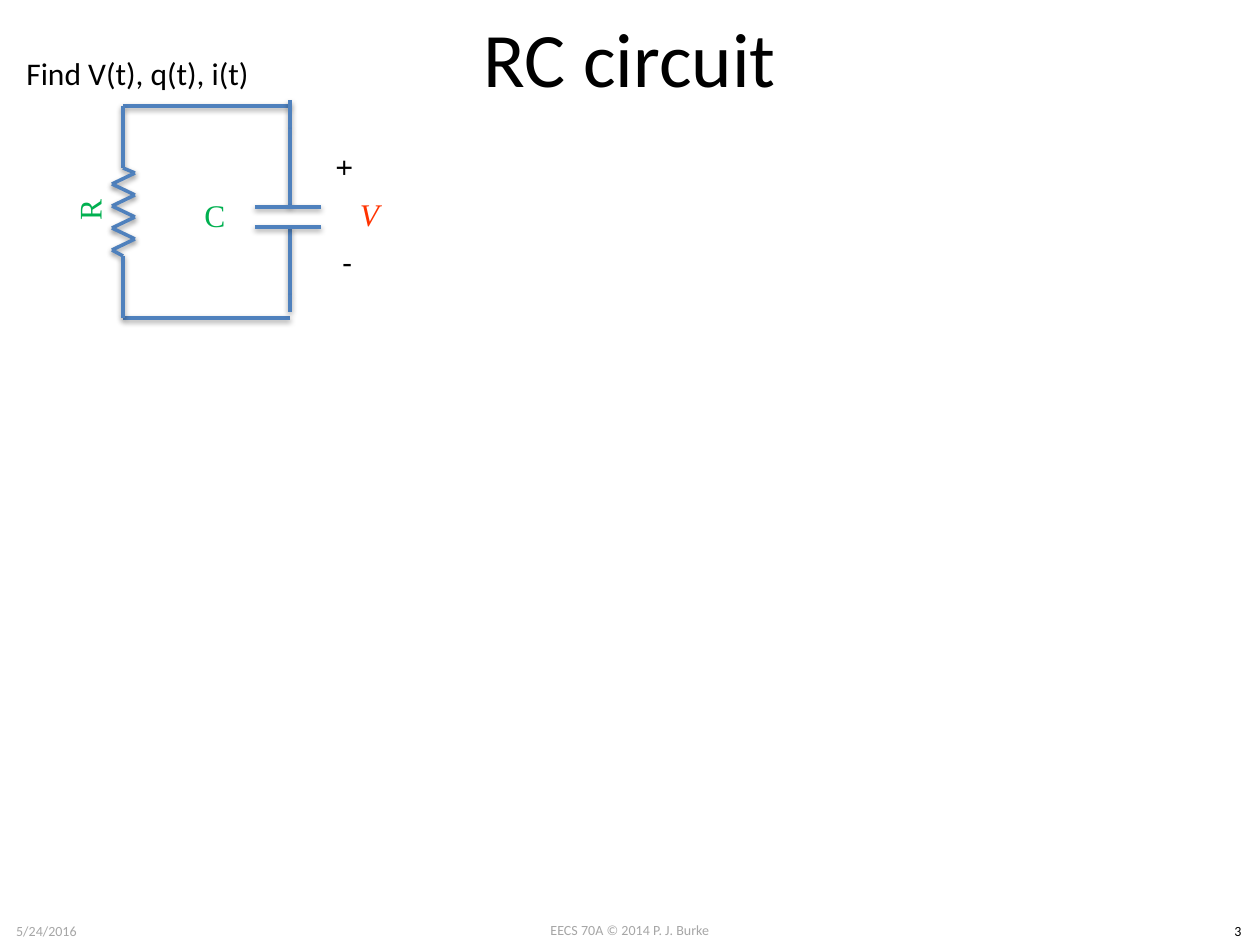
import pptx
import pptx.util
import pptx.dml.color
import pptx.enum.shapes
import pptx.enum.text

PX = 914400 // 126
COLORS = {"black": "000000", "gray": "A6A6A6", "wire": "4F81BD",
          "green": "00B050", "red": "FF3300"}
ALIGN = pptx.enum.text.PP_ALIGN
ANCHOR = pptx.enum.text.MSO_ANCHOR


def rgb(name):
    return pptx.dml.color.RGBColor.from_string(COLORS[name])


def place(sp, box):
    sp.left, sp.top, sp.width, sp.height = [v * PX for v in box]


prs = pptx.Presentation()
prs.slide_width = 1260 * PX
prs.slide_height = 945 * PX
slide = prs.slides.add_slide(prs.slide_layouts[5])

title = slide.shapes.title
place(title, (63, 0, 1134, 158))
tf = title.text_frame
tf.text = "RC circuit"
tf.vertical_anchor = ANCHOR.TOP
tf.margin_top = 10 * PX
p = tf.paragraphs[0]
p.alignment = ALIGN.CENTER
p.font.name = "Calibri"
p.font.size = pptx.util.Pt(44)
p.font.color.rgb = rgb("black")

left, right, top, bottom = 123, 290, 106, 318
plate_top, plate_bottom = 207, 227
zigzag = [(left, 168)]
zigzag += [(112 if i % 2 else 135, 173 + 11 * i) for i in range(8)]
zigzag.append((left, 256))

paths = [
    [(left, top), (right, top)],
    [(left, bottom), (right, bottom)],
    [(right, 100), (right, 129), (right, plate_top)],
    [(right, plate_bottom), (right, 295), (right, 312)],
    [(255, plate_top), (321, plate_top)],
    [(255, plate_bottom), (321, plate_bottom)],
    [(left, top)] + zigzag + [(left, bottom)],
]
for path in paths:
    for start, end in zip(path, path[1:]):
        line = slide.shapes.add_connector(
            pptx.enum.shapes.MSO_CONNECTOR.STRAIGHT,
            *[v * PX for v in start + end])
        line.line.color.rgb = rgb("wire")
        line.line.width = pptx.util.Pt(2)

labels = [
    ("Find V(t), q(t), i(t)", (14, 48, 251, 50), 18, "Calibri", "black", 0),
    ("+", (326, 144, 42, 50), 18, "Calibri", "black", 90),
    ("-", (330, 237, 35, 50), 18, "Calibri", "black", 0),
    ("C", (140, 169, 150, 92), 18, "Times New Roman", "green", 0),
    ("V", (321, 175, 97, 77), 18, "Times New Roman", "red", 0),
    ("R", (14, 164, 150, 92), 18, "Times New Roman", "green", 270),
    ("EECS 70A © 2014 P. J. Burke", (483, 915, 294, 30), 8, "Calibri", "gray", 0),
    ("5/24/2016", (0, 916, 93, 30), 8, "Calibri", "gray", 0),
    ("3", (1216, 916, 44, 30), 8, "Calibri", "black", 0),
]
for text, box, size, font, color, angle in labels:
    sp = slide.shapes.add_textbox(0, 0, 0, 0)
    place(sp, box)
    sp.rotation = angle
    tf = sp.text_frame
    tf.text = text
    symbol = font == "Times New Roman"
    tf.word_wrap = symbol or size == 8
    tf.vertical_anchor = ANCHOR.MIDDLE if symbol else ANCHOR.TOP
    p = tf.paragraphs[0]
    p.alignment = ALIGN.CENTER if tf.word_wrap else ALIGN.LEFT
    p.font.name = font
    p.font.size = pptx.util.Pt(size)
    p.font.italic = text == "V"
    p.font.color.rgb = rgb(color)

prs.save("out.pptx")
